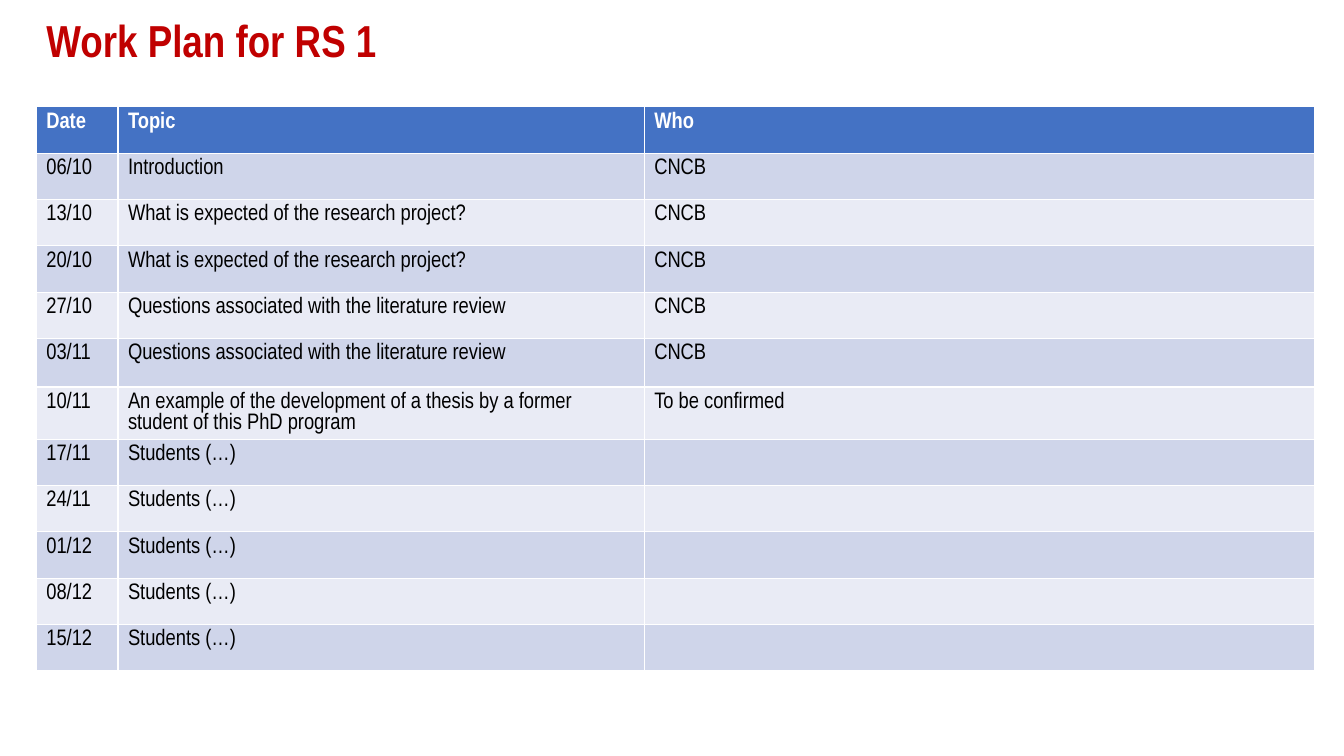
from dataclasses import dataclass
from pptx import Presentation
from pptx import util as u
from pptx.dml import color
from pptx.enum import text


@dataclass(frozen=True)
class Theme:
    font: str = "Arial Narrow"
    title: str = "C00000"
    head: str = "4472C4"
    bands: tuple = ("CFD5EA", "E9EBF5")
    light: str = "FFFFFF"
    ink: str = "000000"
    large: int = 32
    body: int = 16


THEME = Theme()
COLS = (0.81, 5.22, 6.65)
ROW = 0.46
TALL = {5: 0.48}
EXPECT = "What is expected of the research project?"
REVIEW = "Questions associated with the literature review"
THESIS = "An example of the development of a thesis by a former student of this PhD program"
GUESTS = "Students (…)"
PLAN = [
    ("Date", "Topic", "Who"),
    ("06/10", "Introduction", "CNCB"),
    ("13/10", EXPECT, "CNCB"),
    ("20/10", EXPECT, "CNCB"),
    ("27/10", REVIEW, "CNCB"),
    ("03/11", REVIEW, "CNCB"),
    ("10/11", THESIS, "To be confirmed"),
    *((date, GUESTS, "") for date in ("17/11", "24/11", "01/12", "08/12", "15/12")),
]


def write(frame, words, size=THEME.body, ink=THEME.ink, bold=False, space=None):
    para = frame.paragraphs[0]
    para.alignment = text.PP_ALIGN.LEFT
    para.line_spacing = space
    if not words:
        para.font.size = u.Pt(size)
        return
    run = para.add_run()
    run.text = words
    run.font.name = THEME.font
    run.font.size = u.Pt(size)
    run.font.bold = bold
    run.font.color.rgb = color.RGBColor.from_string(ink)


def add_title(slide, words, left, top, width, height):
    title = slide.shapes.title
    title.left, title.top = u.Inches(left), u.Inches(top)
    title.width, title.height = u.Inches(width), u.Inches(height)
    frame = title.text_frame
    frame.word_wrap = True
    frame.auto_size = text.MSO_AUTO_SIZE.NONE
    frame.vertical_anchor = text.MSO_ANCHOR.MIDDLE
    write(frame, words, size=THEME.large, ink=THEME.title, bold=True, space=0.9)


def add_plan(slide, rows, left, top, width):
    heights = [TALL.get(i, ROW) for i in range(len(rows))]
    grid = slide.shapes.add_table(
        len(rows), len(COLS), u.Inches(left), u.Inches(top),
        u.Inches(width), u.Inches(sum(heights))).table
    for col, share in zip(grid.columns, COLS):
        col.width = u.Inches(width * share / sum(COLS))
    for i, (row, height) in enumerate(zip(grid.rows, heights)):
        row.height = u.Inches(height)
        head = i == 0
        fill = THEME.head if head else THEME.bands[(i - 1) % 2]
        for cell, words in zip(row.cells, rows[i]):
            cell.fill.solid()
            cell.fill.fore_color.rgb = color.RGBColor.from_string(fill)
            write(cell.text_frame, words, bold=head,
                  ink=THEME.light if head else THEME.ink)


def main():
    deck = Presentation()
    deck.slide_width, deck.slide_height = u.Inches(13.33), u.Inches(7.5)
    slide = deck.slides.add_slide(deck.slide_layouts[5])
    left, width = 0.36, 12.68
    add_title(slide, "Work Plan for RS 1", left, 0.11, width, 0.64)
    add_plan(slide, PLAN, left, 1.06, width)
    deck.save("out.pptx")


if __name__ == "__main__":
    main()
